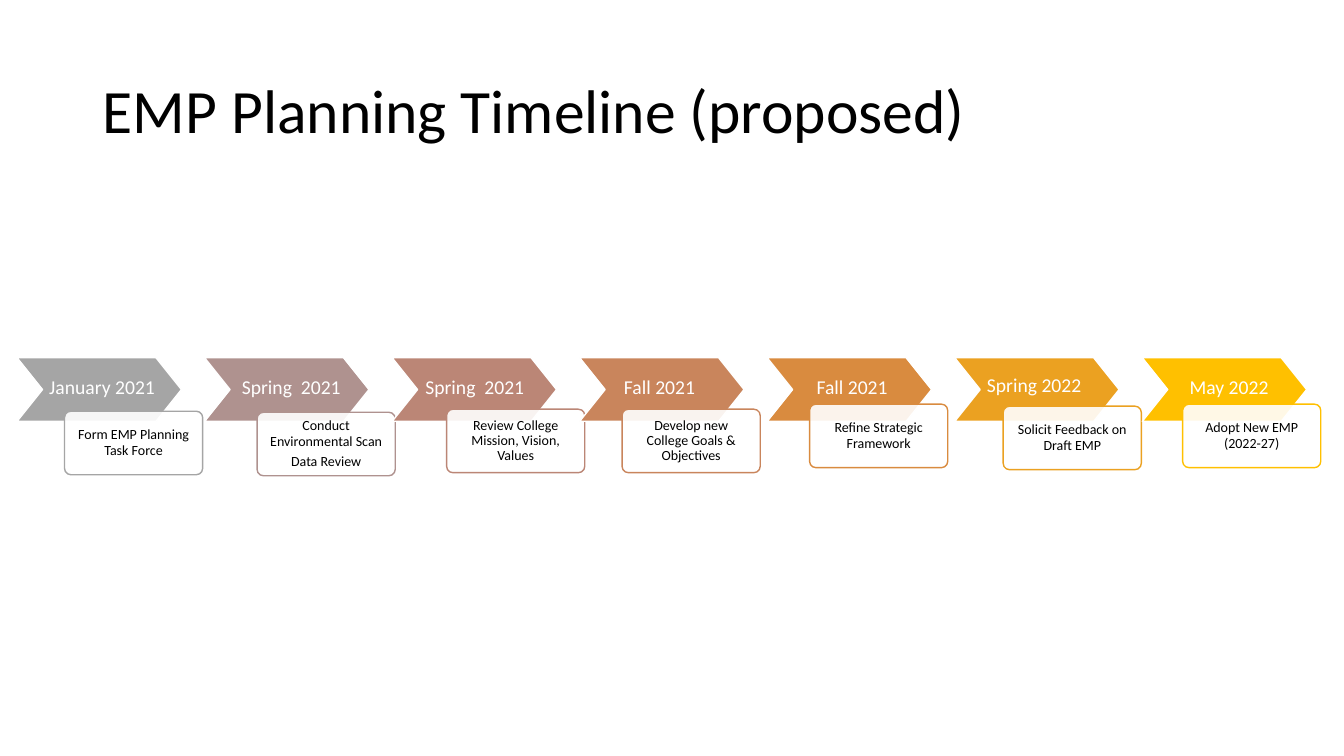
import dataclasses

import lxml.etree
import pptx
import pptx.dml.color
import pptx.enum.shapes
import pptx.enum.text
import pptx.oxml.ns
import pptx.shapes.autoshape
import pptx.slide
import pptx.text.text
import pptx.util

Inches = pptx.util.Inches
Pt = pptx.util.Pt
Shape = pptx.shapes.autoshape.Shape
Slide = pptx.slide.Slide
Kind = pptx.enum.shapes.MSO_SHAPE
Align = pptx.enum.text.PP_ALIGN
Anchor = pptx.enum.text.MSO_ANCHOR

FONT = "Calibri"
COLORS = {
    "black": "000000",
    "white": "FFFFFF",
    "grey": "A5A5A5",
    "mauve": "AF928F",
    "rose": "BB8676",
    "clay": "C9855C",
    "orange": "D98B3F",
    "amber": "EBA121",
    "gold": "FFC000",
}
ARROW_LEFT, ARROW_TOP, ARROW_STEP = 0.17, 3.55, 1.86
ARROW_WIDTH, CARD_WIDTH, HEIGHT = 1.63, 1.37, 0.63


@dataclasses.dataclass
class Stage:
    color: str
    date: str
    date_left: float
    date_width: float
    task: str
    card_left: float
    card_top: float
    date_top: float = 3.67


STAGES = [
    Stage("grey", "January 2021", 0.39, 1.26, "Form EMP Planning Task Force", 0.64, 4.08),
    Stage("mauve", "Spring  2021", 2.3, 1.19,
          "Conduct Environmental Scan\nData Review", 2.55, 4.09),
    Stage("rose", "Spring  2021", 4.12, 1.19,
          "Review College Mission, Vision, Values", 4.43, 4.06),
    Stage("clay", "Fall 2021", 6.09, 0.92,
          "Develop new College Goals & Objectives", 6.17, 4.06),
    Stage("orange", "Fall 2021", 8, 0.92, "Refine Strategic Framework", 8.03, 4.01),
    Stage("amber", "Spring 2022", 9.69, 1.15,
          "Solicit Feedback on Draft EMP", 9.95, 4.03, 3.65),
    Stage("gold", "May 2022", 11.7, 0.99, "Adopt New EMP (2022-27)", 11.73, 4.01),
]


def get_color(name: str) -> pptx.dml.color.RGBColor:
    return pptx.dml.color.RGBColor.from_string(COLORS[name])


def style_text(frame: pptx.text.text.TextFrame, size: float, color: str,
               align: Align = Align.LEFT, space: float = 1.0) -> None:
    for line in frame.paragraphs:
        line.alignment = align
        line.line_spacing = space
        for run in line.runs:
            run.font.name = FONT
            run.font.size = Pt(size)
            run.font.color.rgb = get_color(color)


def add_block(slide: Slide, kind: Kind, left: float, top: float, width: float,
              bend: float, fill: str, line: str) -> Shape:
    block = slide.shapes.add_shape(
        kind, Inches(left), Inches(top), Inches(width), Inches(HEIGHT))
    block.adjustments[0] = bend
    block.shadow.inherit = False
    block.fill.solid()
    block.fill.fore_color.rgb = get_color(fill)
    block.line.color.rgb = get_color(line)
    block.line.width = Pt(1)
    return block


def add_card(slide: Slide, stage: Stage) -> None:
    card = add_block(slide, Kind.ROUNDED_RECTANGLE, stage.card_left, stage.card_top,
                     CARD_WIDTH, 0.1, "white", stage.color)
    tint = card.fill._xPr.find(".//" + pptx.oxml.ns.qn("a:srgbClr"))
    lxml.etree.SubElement(tint, pptx.oxml.ns.qn("a:alpha"), val="90000")
    frame = card.text_frame
    frame.text = stage.task
    frame.word_wrap = True
    frame.vertical_anchor = Anchor.MIDDLE
    frame.margin_left = frame.margin_right = Inches(0.1)
    frame.margin_top = frame.margin_bottom = Inches(0.1)
    style_text(frame, 10, "black", Align.CENTER, 0.9)
    for line in frame.paragraphs[1:]:
        line.space_before = Pt(3.5)


def add_date(slide: Slide, stage: Stage) -> None:
    box = slide.shapes.add_textbox(Inches(stage.date_left), Inches(stage.date_top),
                                   Inches(stage.date_width), Inches(0.34))
    box.text_frame.text = stage.date
    box.text_frame.word_wrap = False
    style_text(box.text_frame, 14, "white")


def add_title(slide: Slide) -> None:
    title = slide.shapes.title
    title.left, title.top = Inches(0.92), Inches(0.4)
    title.width, title.height = Inches(11.5), Inches(1.45)
    title.text_frame.text = "EMP Planning Timeline (proposed)"
    title.text_frame.vertical_anchor = Anchor.MIDDLE
    style_text(title.text_frame, 44, "black", space=0.9)


def main() -> None:
    deck = pptx.Presentation()
    deck.slide_width, deck.slide_height = Inches(13.33), Inches(7.5)
    slide = deck.slides.add_slide(deck.slide_layouts.get_by_name("Title Only"))
    add_title(slide)
    for index, stage in enumerate(STAGES):
        add_block(slide, Kind.CHEVRON, ARROW_LEFT + index * ARROW_STEP, ARROW_TOP,
                  ARROW_WIDTH, 0.4, stage.color, "white")
        add_card(slide, stage)
        add_date(slide, stage)
    deck.save("out.pptx")


if __name__ == "__main__":
    main()
